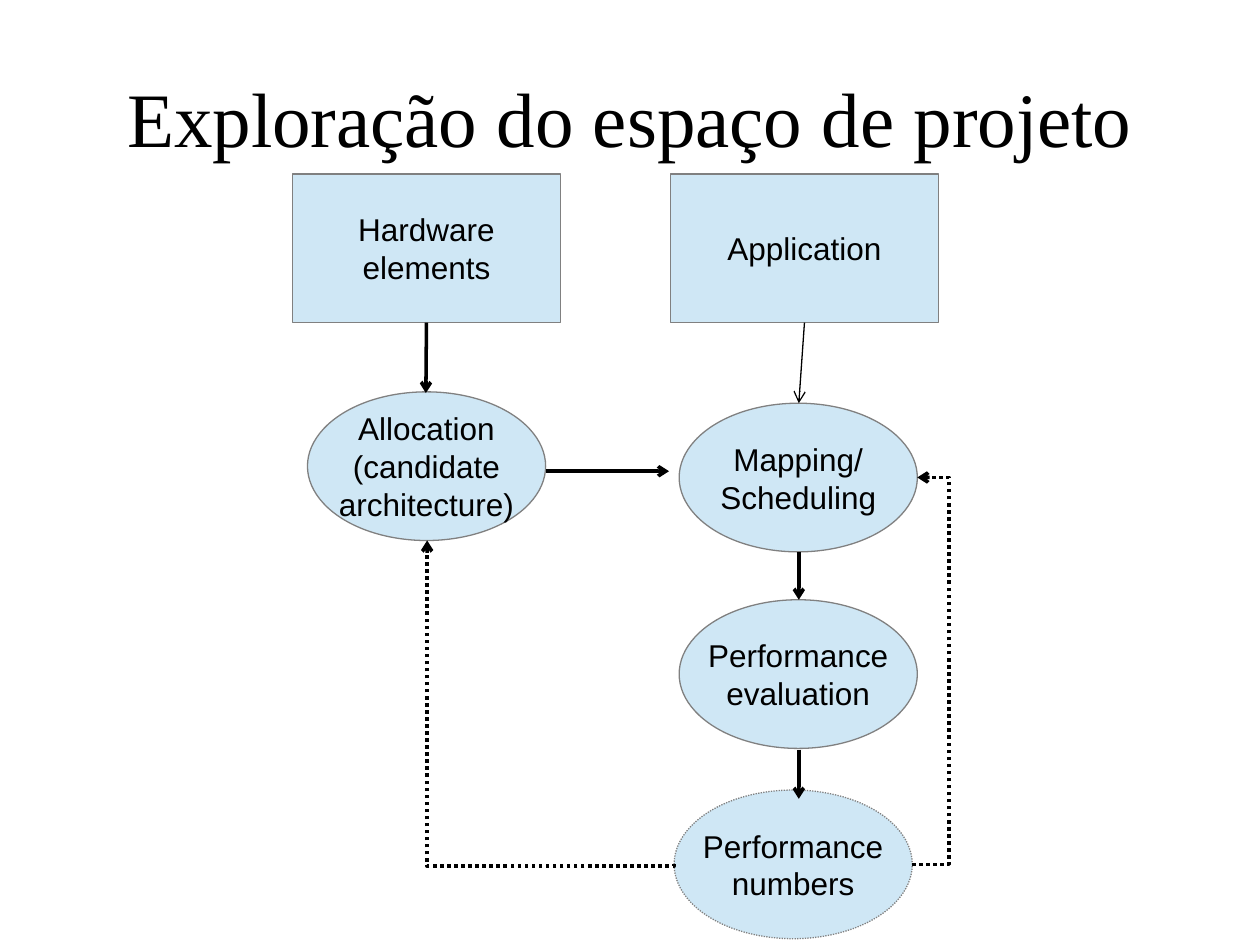
from lxml.etree import SubElement
from pptx import Presentation
from pptx.dml.color import RGBColor
from pptx.enum.dml import MSO_LINE as Dash
from pptx.enum.shapes import MSO_CONNECTOR as Conn, MSO_SHAPE as Shape
from pptx.enum.text import MSO_ANCHOR as Anchor, PP_ALIGN as Align
from pptx.oxml.ns import qn
from pptx.util import Inches, Pt

BLACK = RGBColor(0, 0, 0)
GRAY = RGBColor(0x80, 0x80, 0x80)
BLUE = RGBColor(0xCF, 0xE7, 0xF5)

TITLE = "Exploração do espaço de projeto"
BOX = (Shape.RECTANGLE, 2.13, 1.18)
OVAL = (Shape.OVAL, 1.89, 1.18)
NODES = {
    "app": (BOX, 5.32, 1.38, ["Application"]),
    "hard": (BOX, 2.32, 1.38, ["Hardware", "elements"]),
    "alloc": (OVAL, 2.44, 3.11, ["Allocation", "(candidate", "architecture)"]),
    "map": (OVAL, 5.39, 3.2, ["Mapping/", "Scheduling"]),
    "nums": (OVAL, 5.35, 6.27, ["Performance", "numbers"]),
    "eval": (OVAL, 5.39, 4.76, ["Performance", "evaluation"]),
}
DOTTED = {"nums"}
ARROWS = [
    ((4.33, 3.74), (5.31, 3.74), 0, None),
    ((3.39, 2.56), (3.38, 3.12), 0, "hard"),
    ((6.34, 4.38), (6.34, 4.76), 0, None),
    ((6.34, 5.95), (6.34, 6.34), 0, None),
    ((6.38, 2.56), (6.34, 3.2), 0.75, "app"),
]
LOOPS = [
    ((5.35, 6.86), (3.39, 4.29), -600, True),
    ((7.24, 6.86), (7.28, 3.79), 726200, False),
]


def write(shape, lines, size=18, font="Arial", wrap=False):
    frame = shape.text_frame
    frame.word_wrap = wrap
    frame.vertical_anchor = Anchor.MIDDLE
    frame.text = "\n".join(lines)
    for para in frame.paragraphs:
        para.alignment = Align.CENTER
        style = para.runs[0].font
        style.size, style.name = Pt(size), font
        style.color.rgb = BLACK


def add_node(slide, kind, left, top, lines, dotted):
    form, wide, high = kind
    node = slide.shapes.add_shape(
        form, Inches(left), Inches(top), Inches(wide), Inches(high))
    node.shadow.inherit = False
    node.fill.solid()
    node.fill.fore_color.rgb = BLUE
    node.line.color.rgb = GRAY
    node.line.width = Pt(0)
    if dotted:
        node.line.dash_style = Dash.ROUND_DOT
    write(node, lines)
    return node


def add_arrow(slide, start, end, width=0, kind=Conn.STRAIGHT, dotted=False):
    ends = [Inches(n) for n in (*start, *end)]
    link = slide.shapes.add_connector(kind, *ends)
    link.line.color.rgb = BLACK
    link.line.width = Pt(width)
    if dotted:
        link.line.dash_style = Dash.ROUND_DOT
    SubElement(link.line._get_or_add_ln(), qn("a:tailEnd"), type="arrow")
    SubElement(link._element.spPr, qn("a:effectLst"))
    return link


def add_loop(slide, start, end, bend, turned):
    if turned:
        (x1, y1), (x2, y2) = start, end
        mid, row = (x1 + x2) / 2, (y1 + y2) / 2
        dx, dy = (x1 - x2) / 2, (y1 - y2) / 2
        start, end = (mid - dy, row + dx), (mid + dy, row - dx)
    link = add_arrow(slide, start, end, kind=Conn.ELBOW, dotted=True)
    props = link._element.spPr
    if turned:
        props.find(qn("a:xfrm")).set("rot", str(270 * 60000))
    geom = props.find(qn("a:prstGeom"))
    guides = geom.find(qn("a:avLst"))
    if guides is None:
        guides = SubElement(geom, qn("a:avLst"))
    SubElement(guides, qn("a:gd"), name="adj1", fmla=f"val {bend}")


def main():
    deck = Presentation()
    deck.slide_width, deck.slide_height = Inches(10), Inches(7.5)
    slide = deck.slides.add_slide(deck.slide_layouts[6])
    title = slide.shapes.add_textbox(
        Inches(0.5), Inches(0.3), Inches(9), Inches(1.25))
    write(title, [TITLE], size=44, font="Times New Roman", wrap=True)
    nodes = {name: add_node(slide, *spec, name in DOTTED)
             for name, spec in NODES.items()}
    for start, end, width, source in ARROWS:
        link = add_arrow(slide, start, end, width)
        if source:
            link.begin_connect(nodes[source], 2)
    for loop in LOOPS:
        add_loop(slide, *loop)
    deck.save("out.pptx")


if __name__ == "__main__":
    main()
